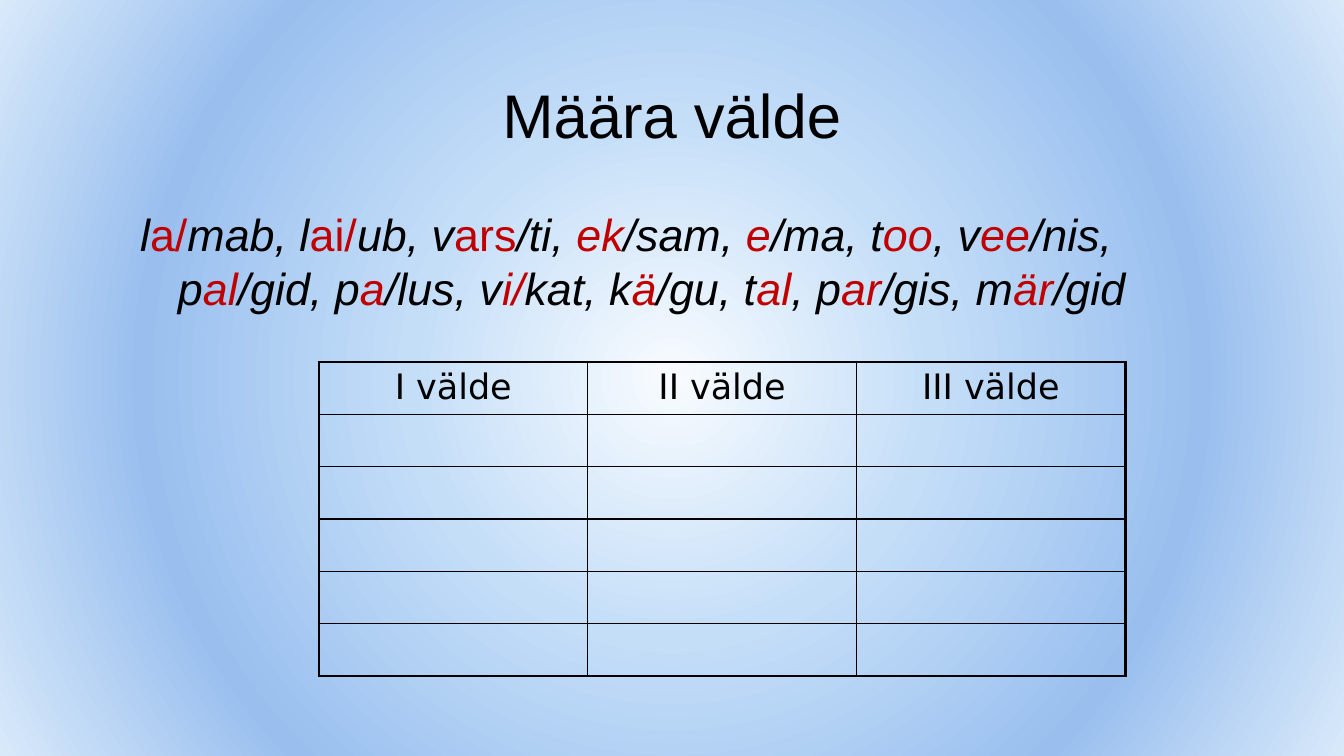
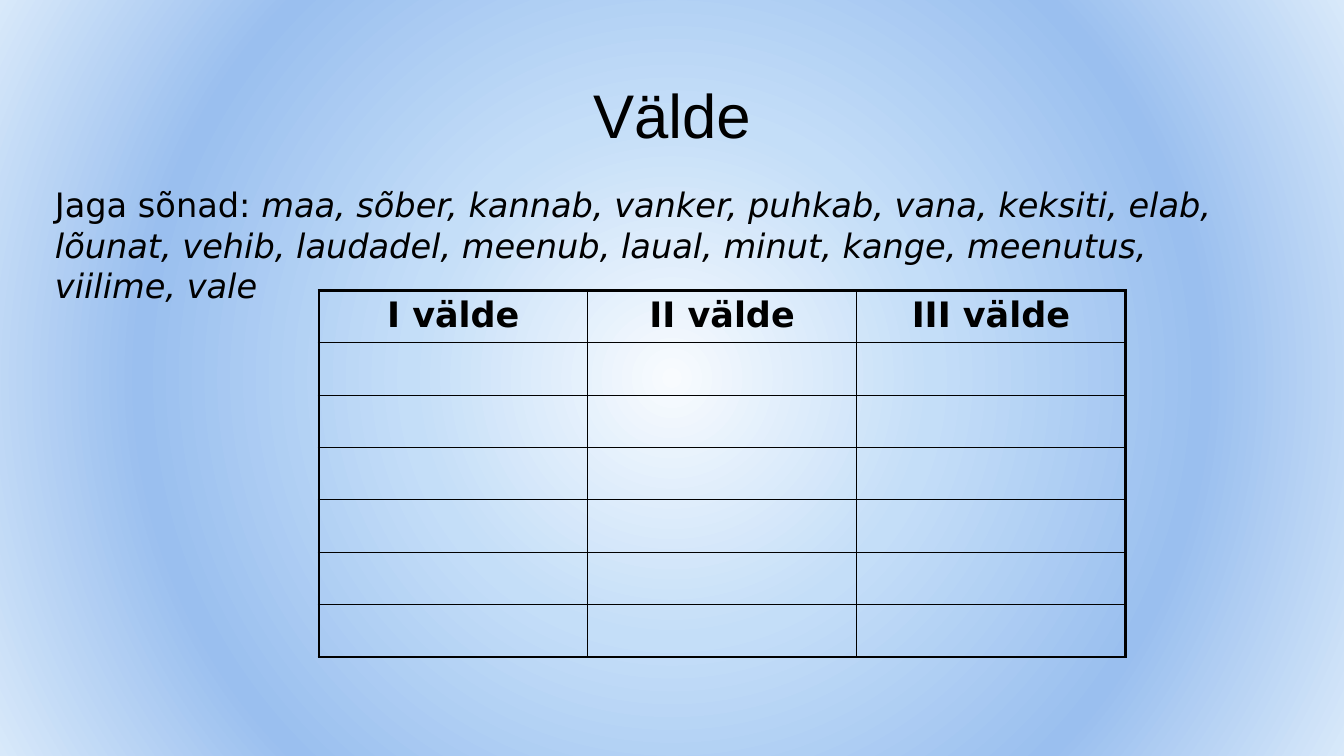
from lxml import etree
from pptx import Presentation
from pptx.dml.color import RGBColor
from pptx.enum.text import MSO_ANCHOR as ANCHOR, PP_ALIGN as ALIGN
from pptx.oxml.ns import qn
from pptx.util import Pt

BLACK = RGBColor(0x00, 0x00, 0x00)
RED = RGBColor(0xC0, 0x00, 0x00)
GLOW = [
    (0, RGBColor(0xF8, 0xFB, 0xFE)),
    (34, RGBColor(0xC4, 0xDE, 0xF8)),
    (69, RGBColor(0x9A, 0xBF, 0xEF)),
    (100, RGBColor(0xD8, 0xE9, 0xFA)),
]
TITLE_FONT, TEXT_FONT = "Arial", "DejaVu Sans"
TITLE_BOX = (48, 21.6, 864, 90)
HEADINGS = ["I välde", "II välde", "III välde"]
COL_W, ROW_H = 192, 37.4
THIN, THICK = 1, 2.25

SYLLABLES = (
    "l|a/|mab, l|ai/|ub, v|ars|/ti, |ek|/sam, |e|/ma, t|oo|, v|ee|/nis, "
    "p|al|/gid, p|a|/lus, v|i/|kat, k|ä|/gu, t|al|, p|ar|/gis, m|är|/gid"
)
UPRIGHT = {"a/", "ai/", "ars"}
WORDS = (
    "maa, sõber, kannab, vanker, puhkab, vana, keksiti, elab, lõunat, vehib, "
    "laudadel, meenub, laual, minut, kange, meenutus, viilime, vale"
)


def add_node(parent, tag, **attrs):
    """Append a drawing element with the given attributes."""
    node = etree.SubElement(parent, qn(tag))
    for name, value in attrs.items():
        node.set(name, str(value))
    return node


def set_background(master):
    """Give the master a round glow that spreads from the centre."""
    master.background.fill.gradient()
    grad = master.element.xpath(".//p:bg//a:gradFill")[0]
    for child in list(grad):
        grad.remove(child)
    stops = add_node(grad, "a:gsLst")
    for pos, color in GLOW:
        stop = add_node(stops, "a:gs", pos=pos * 1000)
        add_node(stop, "a:srgbClr", val=color)
    shade = add_node(grad, "a:path", path="circle")
    add_node(shade, "a:fillToRect", l=50000, t=50000, r=50000, b=50000)


def add_run(p, text, font, size, color=BLACK, italic=False, bold=False):
    """Add one formatted run to a paragraph."""
    r = p.add_run()
    r.text = text
    r.font.name, r.font.size = font, Pt(size)
    r.font.color.rgb = color
    r.font.italic, r.font.bold = italic, bold


def add_text(slide, box, anchor=ANCHOR.TOP):
    """Add a wrapping text box and return its first paragraph."""
    tf = slide.shapes.add_textbox(*map(Pt, box)).text_frame
    tf.word_wrap = True
    tf.vertical_anchor = anchor
    return tf.paragraphs[0]


def add_titled_slide(prs, title):
    """Add a blank slide with the shared centred title."""
    slide = prs.slides.add_slide(prs.slide_layouts[6])
    p = add_text(slide, TITLE_BOX, ANCHOR.BOTTOM)
    p.alignment = ALIGN.CENTER
    add_run(p, title, TITLE_FONT, 44)
    return slide


def set_borders(cell, **widths):
    """Draw black cell borders, given by side in drawing order."""
    tc_pr = cell._tc.get_or_add_tcPr()
    for i, (side, width) in enumerate(widths.items()):
        line = add_node(tc_pr, f"a:ln{side}", w=int(Pt(width)))
        add_node(add_node(line, "a:solidFill"), "a:srgbClr", val=BLACK)
        tc_pr.insert(i, line)


def add_quantity_table(slide, left, top, row_count, bold=False):
    """Add the grid with one headed column for each quantity."""
    col_count = len(HEADINGS)
    size = (col_count * COL_W, row_count * ROW_H)
    table = slide.shapes.add_table(
        row_count, col_count, Pt(left), Pt(top), *map(Pt, size)
    ).table
    table.first_row = table.horz_banding = False
    for col in table.columns:
        col.width = Pt(COL_W)
    for i, row in enumerate(table.rows):
        row.height = Pt(ROW_H)
        for j, cell in enumerate(row.cells):
            cell.fill.background()
            set_borders(
                cell,
                L=THICK if j == 0 else THIN,
                R=THICK if j == col_count - 1 else THIN,
                T=THICK if i == 0 else THIN,
                B=THICK if i == row_count - 1 else THIN,
            )
    for cell, heading in zip(table.rows[0].cells, HEADINGS):
        p = cell.text_frame.paragraphs[0]
        p.alignment = ALIGN.CENTER
        add_run(p, heading, TEXT_FONT, 25, bold=bold)


def add_syllables(slide, box):
    """Add the hanging paragraph with the key sounds in red."""
    p = add_text(slide, box)
    p.space_before = Pt(4)
    p_pr = p._p.get_or_add_pPr()
    p_pr.set("marL", str(Pt(27)))
    p_pr.set("indent", str(-Pt(27)))
    for i, part in enumerate(SYLLABLES.split("|")):
        color = RED if i % 2 else BLACK
        add_run(p, part, TITLE_FONT, 32, color, italic=part not in UPRIGHT)


def add_word_list(slide, box):
    """Add the instruction followed by the words in italics."""
    p = add_text(slide, box)
    p.space_before = Pt(3)
    add_run(p, "Jaga sõnad: ", TEXT_FONT, 24)
    add_run(p, WORDS, TEXT_FONT, 24, italic=True)


def main():
    """Build both slides and save the file."""
    prs = Presentation()
    prs.slide_width, prs.slide_height = Pt(960), Pt(540)
    set_background(prs.slide_master)

    slide = add_titled_slide(prs, "Määra välde")
    add_syllables(slide, (93, 144, 811, 324))
    add_quantity_table(slide, 227.8, 258.5, 6)

    slide = add_titled_slide(prs, "Välde")
    add_quantity_table(slide, 227.8, 207.5, 7, bold=True)
    add_word_list(slide, (32.2, 128, 880, 93.6))

    prs.save("out.pptx")


if __name__ == "__main__":
    main()
